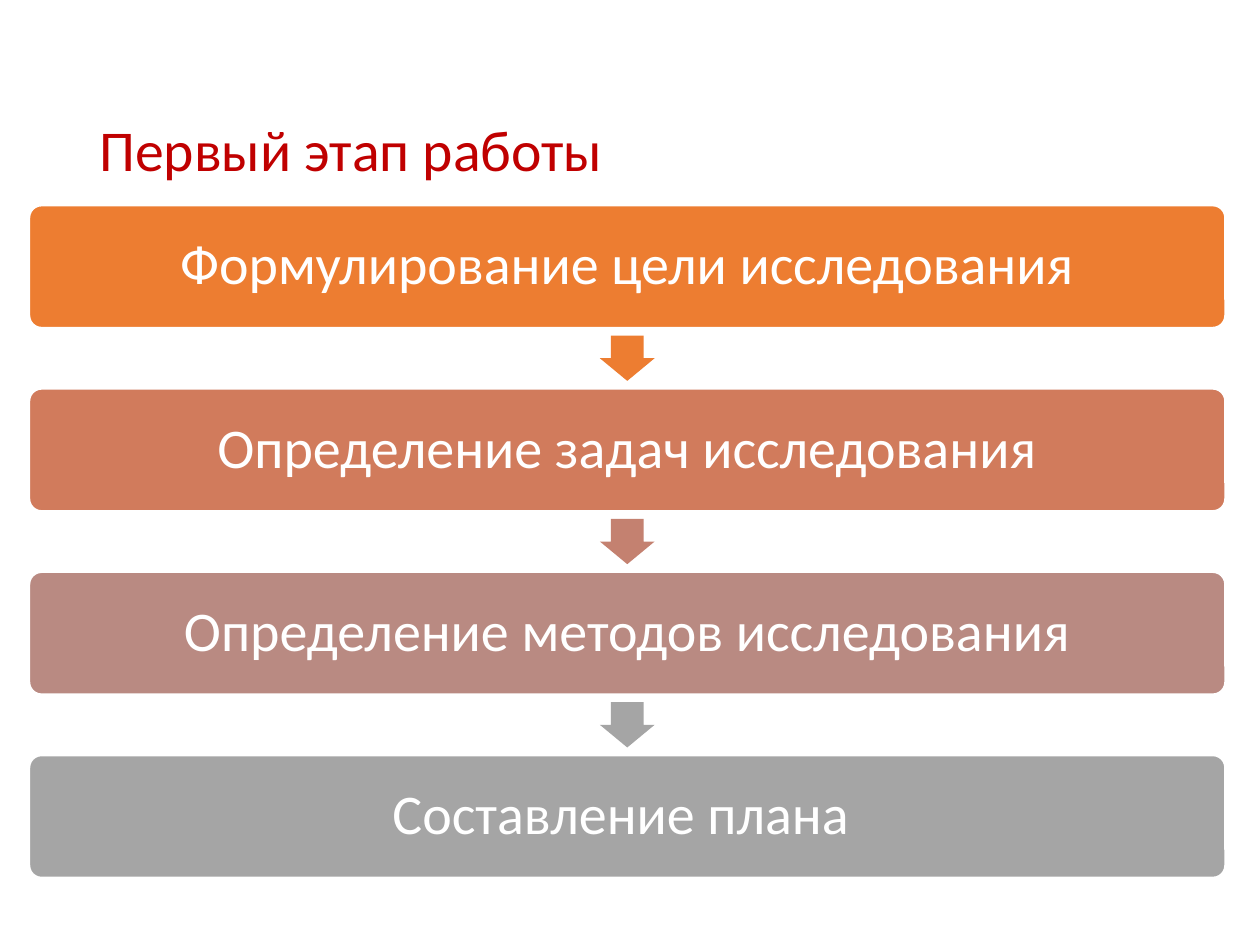
from pptx import Presentation
from pptx.dml.color import RGBColor
from pptx.enum.shapes import MSO_SHAPE as Shape
from pptx.enum.text import MSO_ANCHOR as Anchor, PP_ALIGN as Align
from pptx.util import Inches, Pt

COLORS = {
    "title": "C00000",
    "white": "FFFFFF",
    "orange": "ED7D31",
    "terracotta": "D17B5C",
    "clay": "C48170",
    "rose": "B98A82",
    "gray": "A5A5A5",
}

STEPS = [
    ("Формулирование цели исследования", "orange"),
    ("Определение задач исследования", "terracotta"),
    ("Определение методов исследования", "rose"),
    ("Составление плана ", "gray"),
]
ARROWS = ["orange", "clay", "gray"]

# Lengths are percentages of the slide's width and height
STEP_LEFT, STEP_WIDTH = 2.33, 94.9
STEP_TOP, STEP_HEIGHT = 21.75, 12.93
STEP_PITCH = 1.5 * STEP_HEIGHT
ARROW_WIDTH, ARROW_HEIGHT = 3.6, 5.8


class FlowSlide:
    font = "Calibri"
    margin = Inches(0.13)

    def __init__(self, deck):
        self.deck = deck
        self.slide = deck.slides.add_slide(deck.slide_layouts[6])

    def place(self, left, top, width, height):
        """Turn percentages of the slide into lengths."""
        across, down = self.deck.slide_width / 100, self.deck.slide_height / 100
        return [round(n) for n in (left * across, top * down, width * across, height * down)]

    def set_text(self, frame, text, size, color, align):
        frame.word_wrap = True
        frame.vertical_anchor = Anchor.MIDDLE
        line = frame.paragraphs[0]
        line.text = text
        line.alignment = align
        line.line_spacing = 0.9
        line.font.name = self.font
        line.font.size = Pt(size)
        line.font.color.rgb = RGBColor.from_string(COLORS[color])

    def title(self, text, *box):
        title = self.slide.shapes.add_textbox(*self.place(*box))
        self.set_text(title.text_frame, text, 33, "title", Align.LEFT)

    def filled(self, kind, color, *box):
        shape = self.slide.shapes.add_shape(kind, *self.place(*box))
        shape.shadow.inherit = False
        shape.fill.solid()
        shape.fill.fore_color.rgb = RGBColor.from_string(COLORS[color])
        shape.line.fill.background()
        return shape

    def step(self, text, color, *box):
        step = self.filled(Shape.ROUNDED_RECTANGLE, color, *box)
        step.adjustments[0] = 0.1
        step.line.color.rgb = RGBColor.from_string(COLORS["white"])
        step.line.width = Pt(1)
        frame = step.text_frame
        frame.margin_left = frame.margin_right = self.margin
        frame.margin_top = frame.margin_bottom = self.margin
        self.set_text(frame, text, 32, "white", Align.CENTER)

    def arrow(self, color, center_x, center_y):
        arrow = self.filled(Shape.RIGHT_ARROW, color,
                            center_x - ARROW_WIDTH / 2, center_y - ARROW_HEIGHT / 2,
                            ARROW_WIDTH, ARROW_HEIGHT)
        arrow.adjustments[0], arrow.adjustments[1] = 0.6, 0.5
        arrow.rotation = 90


def main():
    deck = Presentation()
    deck.slide_width, deck.slide_height = Inches(10), Inches(7.5)
    flow = FlowSlide(deck)
    flow.title("Первый этап работы", 6.9, 6.53, 86.2, 19.33)

    for row, (text, color) in enumerate(STEPS):
        top = STEP_TOP + row * STEP_PITCH
        flow.step(text, color, STEP_LEFT, top, STEP_WIDTH, STEP_HEIGHT)
        if row < len(ARROWS):
            gap_middle = top + (STEP_HEIGHT + STEP_PITCH) / 2
            flow.arrow(ARROWS[row], STEP_LEFT + STEP_WIDTH / 2, gap_middle)

    deck.save("out.pptx")


if __name__ == "__main__":
    main()
